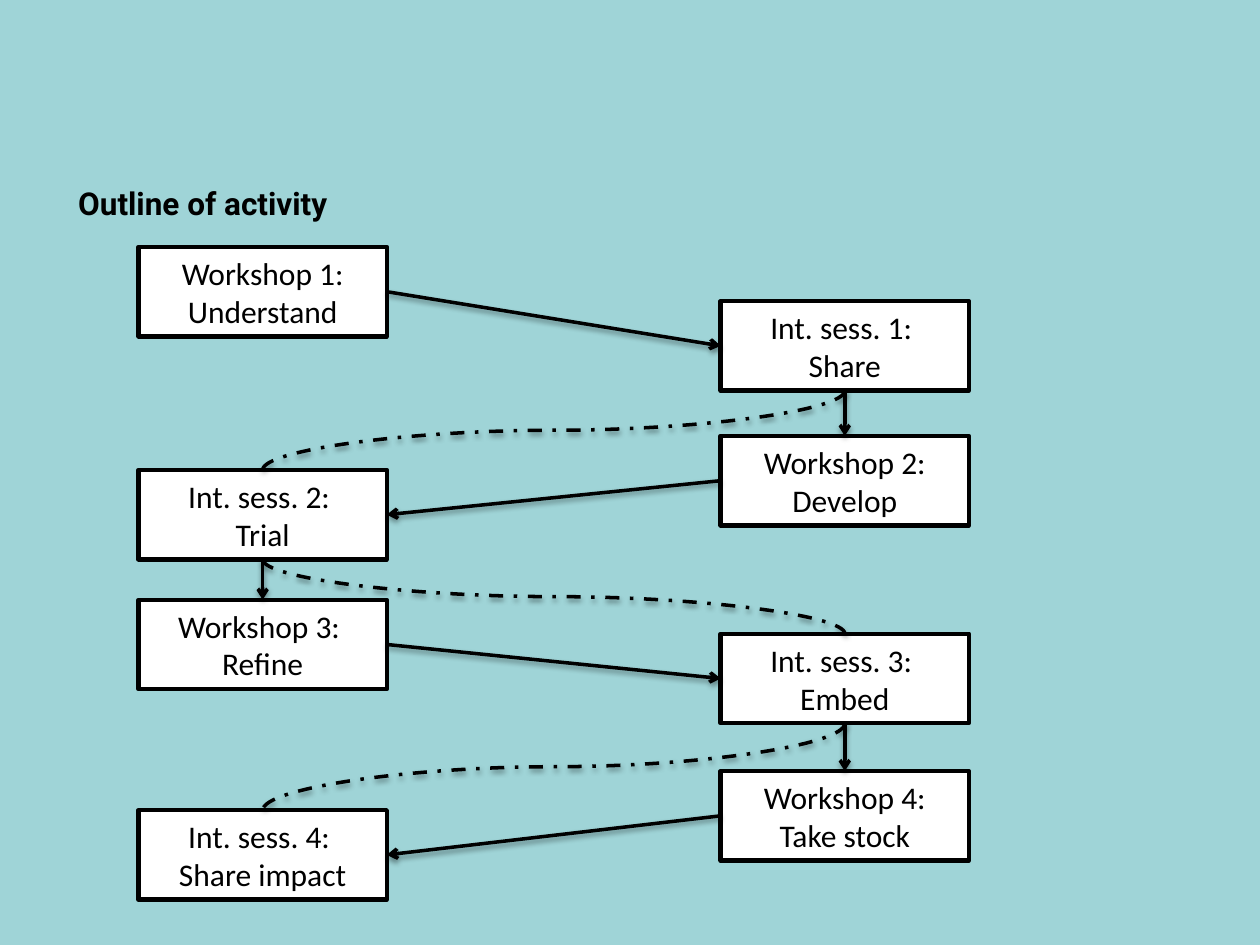
from lxml.etree import SubElement
from pptx import Presentation
from pptx.dml.color import RGBColor
from pptx.enum.dml import MSO_LINE
from pptx.enum.shapes import MSO_CONNECTOR as LINK, MSO_SHAPE as SHAPE
from pptx.enum.text import MSO_ANCHOR as ANCHOR, MSO_AUTO_SIZE as FIT, PP_ALIGN as ALIGN
from pptx.oxml.ns import qn
from pptx.util import Inches, Pt

TOP, LEFT, BOTTOM, RIGHT = range(4)  # connection sites of a rectangle


def color(hex_string):
    return RGBColor.from_string(hex_string)


def apply(target, values):
    for name, value in values.items():
        setattr(target, name, value)


class Flowchart:
    """Draws on a grid of 100 columns by 75 rows."""
    BACKGROUND, INK, PAPER = "9FD4D7", "000000", "FFFFFF"
    BOX_SIZE = (19.7, 7.1)
    TITLE_FONT = {"name": "Roboto", "size": Pt(18), "bold": True}
    BOX_FONT = {"name": "Calibri", "size": Pt(18)}
    SHADOW = {"blurRad": Pt(3.1), "dist": Pt(1.6), "dir": 90 * 60000, "rotWithShape": 0}

    def __init__(self, deck):
        self.cell = deck.slide_width / 100
        self.slide = deck.slides.add_slide(deck.slide_layouts[5])
        fill = self.slide.background.fill
        fill.solid()
        fill.fore_color.rgb = color(self.BACKGROUND)

    def grid(self, *cells):
        return [round(n * self.cell) for n in cells]

    def label(self, frame, text, font, align, anchor, fit):
        frame.text = text
        apply(frame, {"word_wrap": True, "vertical_anchor": anchor, "auto_size": fit})
        for paragraph in frame.paragraphs:
            paragraph.alignment = align
            apply(paragraph.font, font)
            paragraph.font.color.rgb = color(self.INK)

    def title(self, text, *place):
        heading = self.slide.shapes.title
        apply(heading, dict(zip(("left", "top", "width", "height"), self.grid(*place))))
        self.label(heading.text_frame, text, self.TITLE_FONT, ALIGN.LEFT, ANCHOR.TOP, FIT.NONE)

    def box(self, text, column, row):
        box = self.slide.shapes.add_shape(
            SHAPE.RECTANGLE, *self.grid(column, row, *self.BOX_SIZE))
        box.shadow.inherit = False
        box.fill.solid()
        box.fill.fore_color.rgb = color(self.PAPER)
        box.line.color.rgb = color(self.INK)
        box.line.width = Pt(2.5)
        self.label(box.text_frame, text, self.BOX_FONT, ALIGN.CENTER, ANCHOR.MIDDLE,
                   FIT.SHAPE_TO_FIT_TEXT)
        return box

    def stroke(self, link):
        link.line.color.rgb = color(self.INK)
        link.line.width = Pt(2)
        effects = SubElement(link._element.spPr, qn("a:effectLst"))
        shadow = SubElement(effects, qn("a:outerShdw"),
                            {key: str(value) for key, value in self.SHADOW.items()})
        shade = SubElement(shadow, qn("a:srgbClr"), val=self.INK)
        SubElement(shade, qn("a:alpha"), val="38000")

    def arrow(self, start, start_site, end, end_site):
        link = self.slide.shapes.add_connector(LINK.STRAIGHT, 0, 0, 0, 0)
        link.begin_connect(start, start_site)
        link.end_connect(end, end_site)
        self.stroke(link)
        SubElement(link.line._get_or_add_ln(), qn("a:tailEnd"), type="arrow")

    def curve(self, start, end):
        """Dashed curve from the bottom of one box to the top of a lower one."""
        y1, y2 = start.top + start.height, end.top
        across, down = end.left - start.left, y2 - y1
        x_mid = (start.left + end.left + start.width) // 2
        y_mid = (y1 + y2) // 2
        # The preset runs sideways, so it is laid out flat and then turned
        half = down // 2 if across < 0 else -down // 2
        rise = abs(across) // 2
        link = self.slide.shapes.add_connector(
            LINK.CURVE, x_mid - half, y_mid - rise, x_mid + half, y_mid + rise)
        turn = 90 if across < 0 else 270
        link._element.spPr.find(qn("a:xfrm")).set("rot", str(turn * 60000))
        self.stroke(link)
        link.line.dash_style = MSO_LINE.DASH_DOT


def main():
    deck = Presentation()
    apply(deck, {"slide_width": Inches(10), "slide_height": Inches(7.5)})
    chart = Flowchart(deck)
    chart.title("Outline of activity", 5.2, 14.1, 89.9, 5.5)

    # Workshops and the sessions between them
    near, far = 11, 57.2
    understand = chart.box("Workshop 1: Understand", near, 19.6)
    share = chart.box("Int. sess. 1: \nShare", far, 23.9)
    trial = chart.box("Int. sess. 2: \nTrial", near, 37.3)
    develop = chart.box("Workshop 2: Develop", far, 34.6)
    refine = chart.box("Workshop 3: \nRefine", near, 47.6)
    embed = chart.box("Int. sess. 3: \nEmbed", far, 50.3)
    impact = chart.box("Int. sess. 4: \nShare impact", near, 64.3)
    stock = chart.box("Workshop 4: Take stock", far, 61.2)

    # Steps from one side to the other
    for start, end in ((understand, share), (refine, embed)):
        chart.arrow(start, RIGHT, end, LEFT)
    for start, end in ((develop, trial), (stock, impact)):
        chart.arrow(start, LEFT, end, RIGHT)

    # Steps down one side
    for start, end in ((share, develop), (trial, refine), (embed, stock)):
        chart.arrow(start, BOTTOM, end, TOP)

    # Links from session to session
    sessions = (share, trial, embed, impact)
    for start, end in zip(sessions, sessions[1:]):
        chart.curve(start, end)

    deck.save("out.pptx")


if __name__ == "__main__":
    main()
